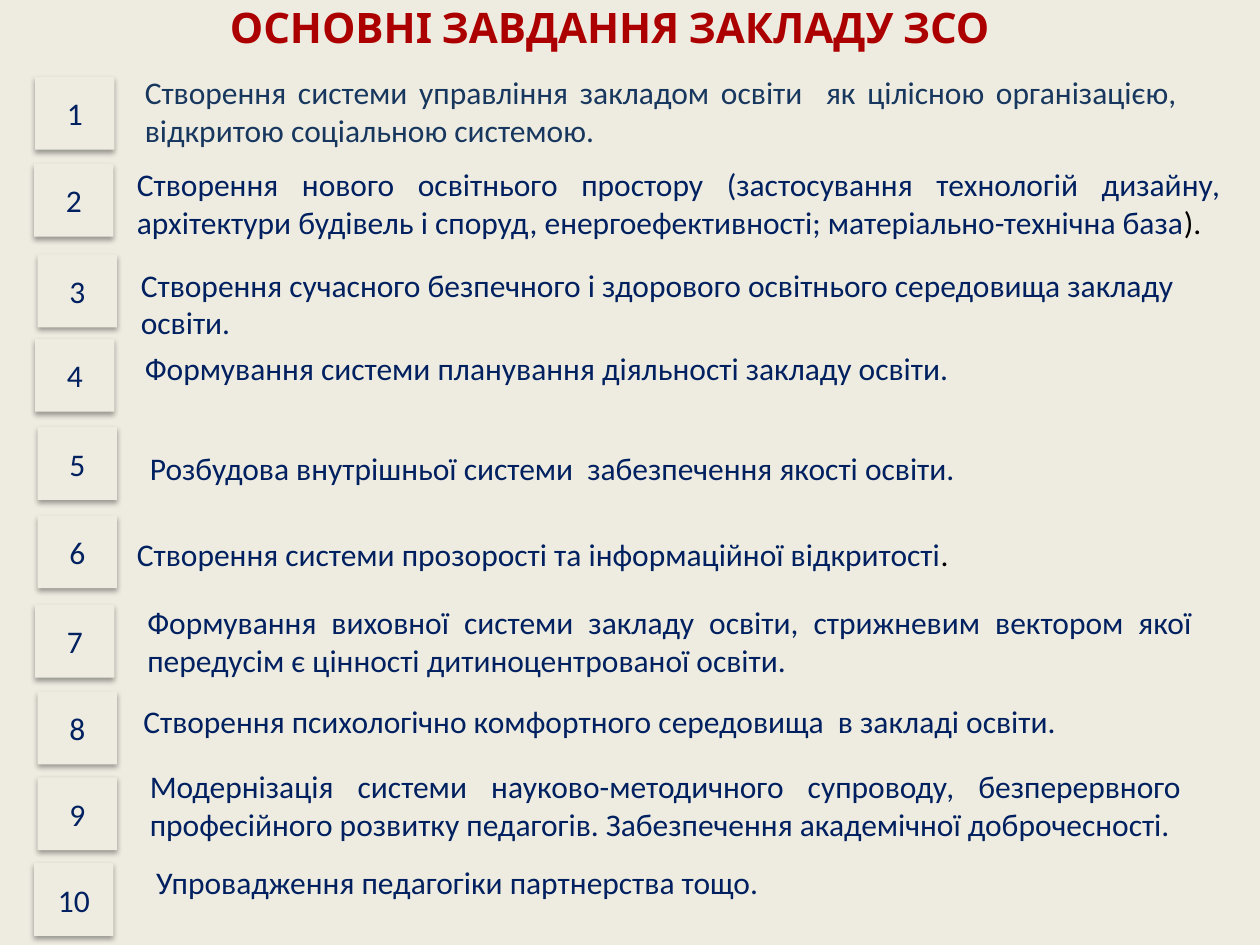
from dataclasses import dataclass

from lxml import etree
from pptx import Presentation
from pptx.dml.color import RGBColor
from pptx.enum.shapes import MSO_SHAPE
from pptx.enum.text import MSO_ANCHOR, MSO_AUTO_SIZE, PP_ALIGN
from pptx.oxml.ns import qn
from pptx.util import Cm, Pt

RECTANGLE = MSO_SHAPE.RECTANGLE
LEFT, CENTER, JUSTIFY = PP_ALIGN.LEFT, PP_ALIGN.CENTER, PP_ALIGN.JUSTIFY
TOP, MIDDLE = MSO_ANCHOR.TOP, MSO_ANCHOR.MIDDLE
GROW = MSO_AUTO_SIZE.SHAPE_TO_FIT_TEXT

CREAM = RGBColor(0xEE, 0xEC, 0xE1)
RED = RGBColor(0xAC, 0x00, 0x00)
NAVY = RGBColor(0x00, 0x20, 0x60)
SLATE = RGBColor(0x17, 0x37, 0x5E)
BLACK = RGBColor(0x00, 0x00, 0x00)

BADGE_WIDTH, BADGE_HEIGHT = 1.6, 1.47
ONE_LINE, TWO_LINES = 1.02, 1.8


@dataclass
class Task:
    """One numbered task; lengths are in centimetres."""
    badge: tuple  # left, top
    place: tuple  # left, top, width, height
    wording: str
    ending: str = ""  # closing punctuation in black
    align: PP_ALIGN = LEFT
    color: RGBColor = NAVY


TASKS = [
    Task((0.71, 1.55), (2.67, 1.35, 21.31, TWO_LINES),
         "Створення системи управління закладом освіти  як цілісною організацією, "
         "відкритою соціальною системою. ", align=JUSTIFY, color=SLATE),
    Task((0.69, 3.3), (2.51, 3.2, 22.35, TWO_LINES),
         "Створення нового освітнього простору (застосування технологій дизайну, "
         "архітектури будівель і споруд, енергоефективності; "
         "матеріально-технічна база", ").", align=JUSTIFY),
    Task((0.76, 5.13), (2.59, 5.23, 22.81, TWO_LINES),
         "Створення сучасного безпечного і здорового освітнього середовища "
         "закладу освіти."),
    Task((0.71, 6.83), (2.67, 6.91, 22.28, ONE_LINE),
         "Формування системи планування діяльності закладу освіти."),
    Task((0.76, 8.61), (2.77, 8.92, 22.15, ONE_LINE),
         "Розбудова внутрішньої системи  забезпечення якості освіти."),
    Task((0.76, 10.39), (2.51, 10.67, 18.08, ONE_LINE),
         "Створення системи прозорості та інформаційної відкритості", "."),
    Task((0.71, 12.19), (2.72, 12.04, 21.56, TWO_LINES),
         "Формування виховної системи закладу освіти, cтрижневим вектором якої "
         "передусім є цінності дитиноцентрованої освіти.", align=JUSTIFY),
    Task((0.76, 13.94), (2.64, 14.02, 22.76, ONE_LINE),
         "Створення психологічно комфортного середовища  в закладі освіти."),
    Task((0.76, 15.67), (2.77, 15.34, 21.29, TWO_LINES),
         "Модернізація системи науково-методичного супроводу, безперервного "
         "професійного розвитку педагогів. Забезпечення академічної "
         "доброчесності.", align=JUSTIFY),
    Task((0.69, 17.4), (2.9, 17.27, 21.92, ONE_LINE),
         "Упровадження педагогіки партнерства тощо.", align=JUSTIFY),
]


def add_run(paragraph, text, color, size=18, font="Calibri", bold=False):
    run = paragraph.add_run()
    run.text = text
    run.font.name = font
    run.font.size = Pt(size)
    run.font.bold = bold
    run.font.color.rgb = color


def add_soft_shadow(shape):
    """Give the shape a faint shadow that falls straight down."""
    shape.shadow.inherit = False
    effects = shape._element.spPr.find(qn("a:effectLst"))
    shadow = etree.SubElement(
        effects, qn("a:outerShdw"), blurRad=str(Pt(3.1)), dist=str(Pt(1.8)),
        dir="5400000", rotWithShape="0")
    tint = etree.SubElement(shadow, qn("a:srgbClr"), val="000000")
    etree.SubElement(tint, qn("a:alpha"), val="35000")


def format_title(title):
    title.left, title.top = Cm(0.79), Cm(-0.1)
    title.width, title.height = Cm(23.19), Cm(1.27)
    frame = title.text_frame
    frame.word_wrap = True
    frame.auto_size = GROW
    frame.vertical_anchor = TOP
    heading = frame.paragraphs[0]
    heading.alignment = CENTER
    add_run(heading, "ОСНОВНІ ЗАВДАННЯ ЗАКЛАДУ ЗСО ", RED, 24, "Cabin", True)


def add_badge(slide, number, left, top):
    badge = slide.shapes.add_shape(
        RECTANGLE, Cm(left), Cm(top), Cm(BADGE_WIDTH), Cm(BADGE_HEIGHT))
    badge.fill.solid()
    badge.fill.fore_color.rgb = CREAM
    badge.line.fill.background()
    add_soft_shadow(badge)
    badge.text_frame.vertical_anchor = MIDDLE
    label = badge.text_frame.paragraphs[0]
    label.alignment = CENTER
    add_run(label, str(number), NAVY)


def add_wording(slide, task):
    box = slide.shapes.add_textbox(*(Cm(length) for length in task.place))
    frame = box.text_frame
    frame.word_wrap = True
    frame.auto_size = GROW
    paragraph = frame.paragraphs[0]
    paragraph.alignment = task.align
    add_run(paragraph, task.wording, task.color)
    if task.ending:
        add_run(paragraph, task.ending, BLACK)


def main():
    deck = Presentation()
    deck.slide_width, deck.slide_height = Cm(25.4), Cm(19.05)
    slide = deck.slides.add_slide(deck.slide_layouts[5])
    slide.background.fill.solid()
    slide.background.fill.fore_color.rgb = CREAM

    format_title(slide.shapes.title)
    for number, task in enumerate(TASKS, start=1):
        add_badge(slide, number, *task.badge)
        add_wording(slide, task)
    deck.save("out.pptx")


if __name__ == "__main__":
    main()
